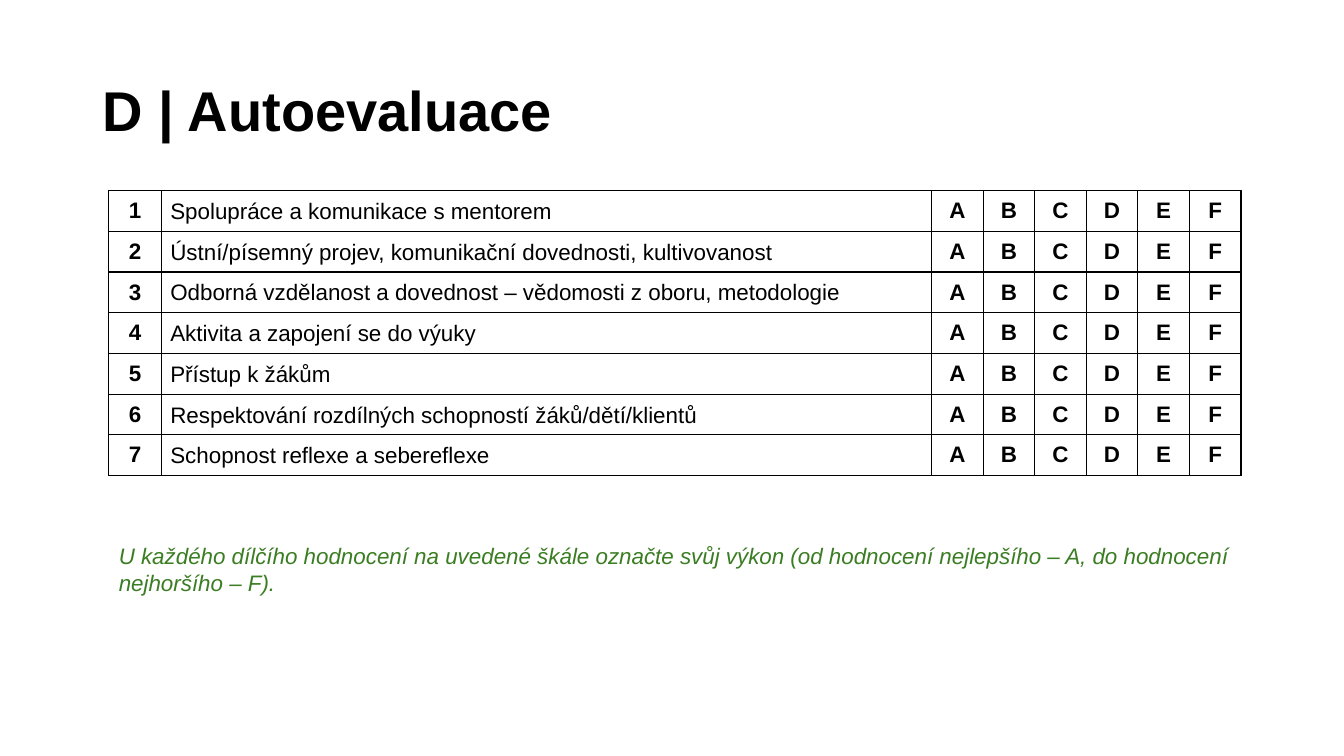
from lxml import etree
from pptx import Presentation
from pptx.dml.color import RGBColor
from pptx.enum.text import MSO_ANCHOR, PP_ALIGN
from pptx.oxml.ns import qn
from pptx.util import Inches, Pt

MIDDLE, TOP = MSO_ANCHOR.MIDDLE, MSO_ANCHOR.TOP
LEFT, CENTER = PP_ALIGN.LEFT, PP_ALIGN.CENTER
TITLE_ONLY = 5
FONT = "Arial"
COLORS = {"ink": "000000", "note": "3B7D23"}
PAGE_WIDTH, PAGE_HEIGHT = 13.33, 7.5

TITLE = "D | Autoevaluace"
CRITERIA = [
    "Spolupráce a komunikace s mentorem",
    "Ústní/písemný projev, komunikační dovednosti, kultivovanost",
    "Odborná vzdělanost a dovednost – vědomosti z oboru, metodologie",
    "Aktivita a zapojení se do výuky",
    "Přístup k žákům",
    "Respektování rozdílných schopností žáků/dětí/klientů",
    "Schopnost reflexe a sebereflexe",
]
GRADES = "ABCDEF"
NOTE = (
    "U každého dílčího hodnocení na uvedené škále označte svůj výkon "
    "(od hodnocení nejlepšího – A, do hodnocení nejhoršího – F)."
)

CONTENT_LEFT, TEXT_WIDTH = 1.08, 11.5
TABLE_TOP, TABLE_WIDTH, TABLE_HEIGHT = 1.89, 11.23, 2.83
NUMBER_WIDTH, CRITERION_WIDTH = 0.52, 7.64
GRADE_WIDTH = (TABLE_WIDTH - NUMBER_WIDTH - CRITERION_WIDTH) / len(GRADES)
ROW_HEIGHT = TABLE_HEIGHT / len(CRITERIA)


def write(frame, text, size, color, bold=False, italic=False):
    frame.text = text
    para = frame.paragraphs[0]
    font = para.runs[0].font
    font.name, font.size = FONT, Pt(size)
    font.bold, font.italic = bold, italic
    font.color.rgb = RGBColor.from_string(COLORS[color])
    return para


def add_borders(cell):
    properties = cell._tc.get_or_add_tcPr()
    for side in ("lnL", "lnR", "lnT", "lnB"):
        line = etree.SubElement(properties, qn(f"a:{side}"), w=str(Pt(1)))
        fill = etree.SubElement(line, qn("a:solidFill"))
        etree.SubElement(fill, qn("a:srgbClr"), val=COLORS["ink"])


def format_cell(cell, text, is_criterion):
    cell.margin_left = cell.margin_right = 0
    cell.margin_top = cell.margin_bottom = 0
    cell.vertical_anchor = MIDDLE
    add_borders(cell)
    cell.fill.background()
    para = write(cell.text_frame, text, 16, "ink", bold=not is_criterion)
    if is_criterion:
        para.alignment = LEFT
        para.line_spacing = 1.07
        para.space_after = Pt(8)
        para._p.get_or_add_pPr().set("indent", str(Inches(0.09)))
    else:
        para.alignment = CENTER
        para.space_before = Pt(1.3)


def add_title(page):
    title = page.shapes.title
    title.left, title.top = Inches(0.92), Inches(0.4)
    title.width, title.height = Inches(TEXT_WIDTH), Inches(1.45)
    para = write(title.text_frame, TITLE, 40, "ink", bold=True)
    title.text_frame.vertical_anchor = MIDDLE
    title.text_frame.word_wrap = True
    para.alignment = LEFT
    para.line_spacing = 0.9


def add_evaluation_table(page):
    widths = [NUMBER_WIDTH, CRITERION_WIDTH] + [GRADE_WIDTH] * len(GRADES)
    table = page.shapes.add_table(
        len(CRITERIA), len(widths), Inches(CONTENT_LEFT), Inches(TABLE_TOP),
        Inches(TABLE_WIDTH), Inches(TABLE_HEIGHT),
    ).table
    table.first_row = table.horz_banding = False
    for column, width in zip(table.columns, widths):
        column.width = Inches(width)
    for row_index, criterion in enumerate(CRITERIA):
        table.rows[row_index].height = Inches(ROW_HEIGHT)
        for column_index, text in enumerate([str(row_index + 1), criterion, *GRADES]):
            format_cell(table.cell(row_index, column_index), text, column_index == 1)


def add_note(page):
    box = page.shapes.add_textbox(
        Inches(CONTENT_LEFT), Inches(5.33), Inches(TEXT_WIDTH), Inches(1.59)
    )
    box.text_frame.word_wrap = True
    box.text_frame.vertical_anchor = TOP
    para = write(box.text_frame, NOTE, 16, "note", italic=True)
    para.space_before = Pt(10)


def main():
    deck = Presentation()
    deck.slide_width, deck.slide_height = Inches(PAGE_WIDTH), Inches(PAGE_HEIGHT)
    page = deck.slides.add_slide(deck.slide_layouts[TITLE_ONLY])
    add_title(page)
    add_evaluation_table(page)
    add_note(page)
    deck.save("out.pptx")


if __name__ == "__main__":
    main()
